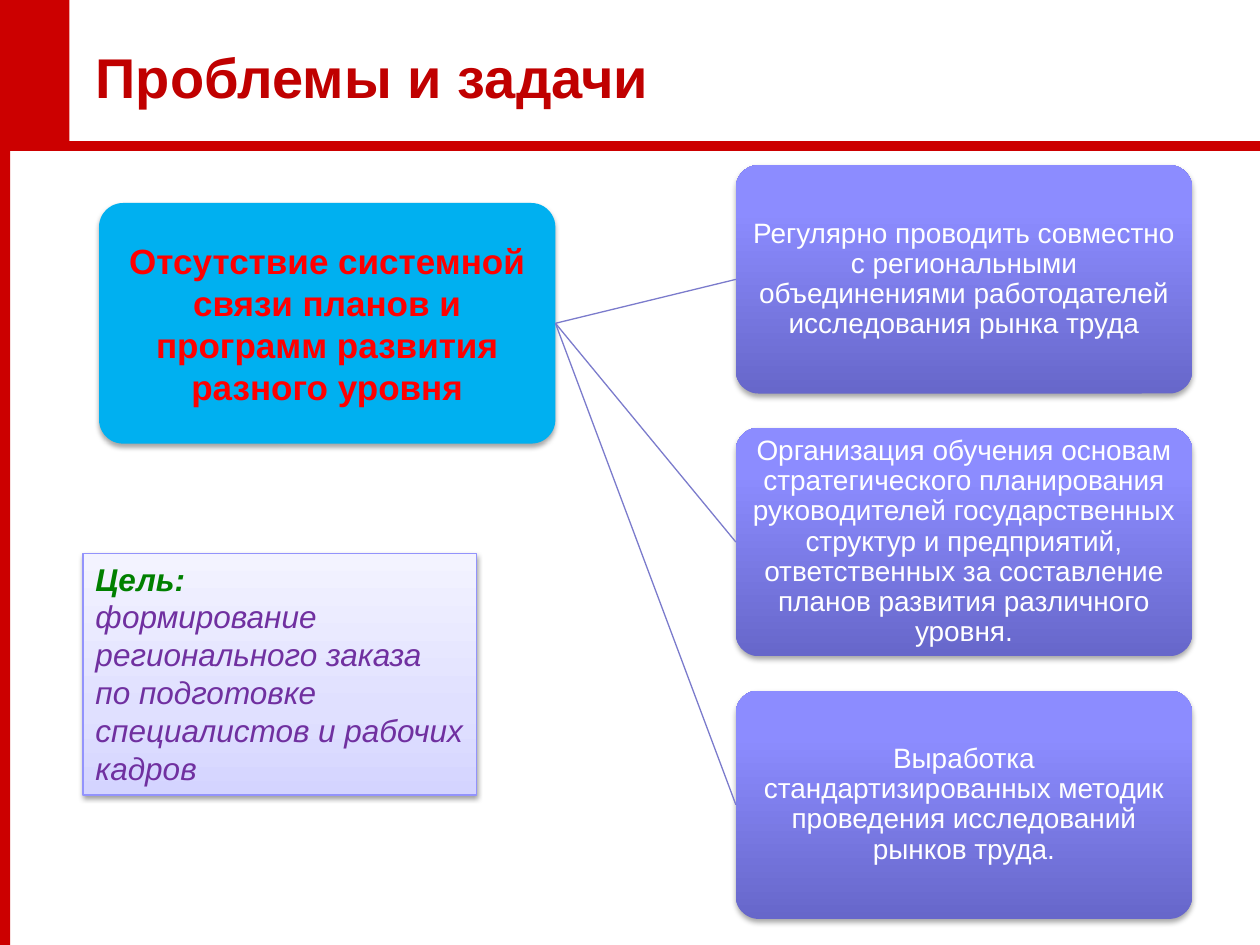
from lxml import etree
from pptx import Presentation
from pptx.dml.color import RGBColor
from pptx.enum import shapes, text
from pptx.oxml import ns
from pptx.util import Pt

C = {"frame": "CC0000", "title": "C00000", "problem": "00B0F0", "alert": "FF0000",
     "link": "7B7BCC", "white": "FFFFFF", "goal_line": "9393FC",
     "goal_head": "008000", "goal_text": "7030A0", "shadow": "000000"}
TASK_STOPS = [(0, "6767CA"), (80, "8C8CFF"), (100, "8E8EFF")]
GOAL_STOPS = [(0, "D4D4FF"), (35, "E0E0FF"), (100, "F3F3FF")]

TITLE = "Проблемы и задачи"
PROBLEM = "Отсутствие системной связи планов и программ развития разного уровня"
TASKS = [
    "Регулярно проводить совместно с региональными объединениями работодателей "
    "исследования рынка труда",
    "Организация обучения основам стратегического планирования руководителей "
    "государственных структур и предприятий, ответственных за составление "
    "планов развития различного уровня.",
    "Выработка стандартизированных методик проведения исследований рынков труда.",
]
GOAL = [("Цель:", "goal_head", True),
        ("формирование регионального заказа по подготовке специалистов "
         "и рабочих кадров", "goal_text", False)]

W, H = 720, 540
PROBLEM_BOX = (56.6, 116, 260.8, 137.5)
TASK_BOX = (420.5, 94.4, 260.8, 130.5)
TASK_STEP = 150.1
GOAL_BOX = (47.5, 316.3, 224.9, 138)


def rgb(name):
    return RGBColor.from_string(C[name])


def child(parent, tag, **attrs):
    return etree.SubElement(parent, ns.qn(tag), attrs)


def add_box(kind, box, fill):
    sp = s.shapes.add_shape(kind, *map(Pt, box))
    sp.shadow.inherit = False
    sp.fill.solid()
    sp.fill.fore_color.rgb = rgb(fill)
    sp.line.fill.background()
    return sp


def add_line(x1, y1, x2, y2, color, width):
    line = s.shapes.add_connector(shapes.MSO_CONNECTOR.STRAIGHT,
                                  *map(Pt, (x1, y1, x2, y2)))
    line.line.color.rgb = rgb(color)
    line.line.width = Pt(width)
    child(line._element.spPr, "a:effectLst")
    return line


def add_gradient(sp, stops):
    """Replace the solid fill by stops running from bottom to top."""
    solid = sp._element.spPr.find(ns.qn("a:solidFill"))
    grad = etree.Element(ns.qn("a:gradFill"), rotWithShape="1")
    gs_list = child(grad, "a:gsLst")
    for pos, color in stops:
        child(child(gs_list, "a:gs", pos=str(pos * 1000)), "a:srgbClr", val=color)
    child(grad, "a:lin", ang="16200000", scaled="0")
    solid.getparent().replace(solid, grad)


def add_shadow(sp, distance, alpha):
    effects = sp._element.spPr.find(ns.qn("a:effectLst"))
    outer = child(effects, "a:outerShdw", blurRad=str(Pt(3.1)), dist=str(Pt(distance)),
                  dir="5400000", rotWithShape="0")
    child(child(outer, "a:srgbClr", val=C["shadow"]), "a:alpha", val=str(alpha * 1000))


def style(p, size, color, bold=False, italic=False, align=text.PP_ALIGN.LEFT):
    p.alignment = align
    f = p.font
    f.name, f.size, f.bold, f.italic = "Arial", Pt(size), bold, italic
    f.color.rgb = rgb(color)


def add_card(box, words, fill, size, color, bold=False):
    sp = add_box(shapes.MSO_SHAPE.ROUNDED_RECTANGLE, box, fill)
    sp.adjustments[0] = 0.1
    add_shadow(sp, 1.8, 35)
    tf = sp.text_frame
    tf.word_wrap = True
    tf.vertical_anchor = text.MSO_ANCHOR.MIDDLE
    tf.margin_left = tf.margin_right = tf.margin_top = tf.margin_bottom = Pt(4.5)
    tf.text = words
    style(tf.paragraphs[0], size, color, bold, align=text.PP_ALIGN.CENTER)
    return sp


prs = Presentation()
prs.slide_width, prs.slide_height = Pt(W), Pt(H)
s = prs.slides.add_slide(prs.slide_layouts[5])

# Red frame
add_box(shapes.MSO_SHAPE.RECTANGLE, (0, 0, 5.8, H), "frame")
add_line(0, 83.5, W, 83.5, "frame", 6)
add_box(shapes.MSO_SHAPE.RECTANGLE, (0, 0, 39.6, 82), "frame")

title = s.shapes.title
title.left, title.top, title.width, title.height = map(Pt, (47.5, 9.4, 595.4, 67.7))
title.text_frame.text = TITLE
title.text_frame.vertical_anchor = text.MSO_ANCHOR.MIDDLE
style(title.text_frame.paragraphs[0], 32, "title", bold=True)

# Problem linked to its tasks
problem = add_card(PROBLEM_BOX, PROBLEM, "problem", 20, "alert", bold=True)
left, top, width, height = TASK_BOX
for i, words in enumerate(TASKS):
    task = add_card((left, top + i * TASK_STEP, width, height), words, "link", 16, "white")
    add_gradient(task, TASK_STOPS)
    task.text_frame.paragraphs[0].line_spacing = 0.9
    link = add_line(0, 0, 0, 0, "link", 0.75)
    link.begin_connect(problem, 3)
    link.end_connect(task, 1)

# Goal
goal = add_box(shapes.MSO_SHAPE.RECTANGLE, GOAL_BOX, "white")
add_gradient(goal, GOAL_STOPS)
goal.line.color.rgb = rgb("goal_line")
goal.line.width = Pt(0.75)
add_shadow(goal, 1.6, 38)
tf = goal.text_frame
tf.word_wrap = True
tf.auto_size = text.MSO_AUTO_SIZE.SHAPE_TO_FIT_TEXT
tf.vertical_anchor = text.MSO_ANCHOR.TOP
tf.text = "\n".join(words for words, _, _ in GOAL)
for p, (_, color, bold) in zip(tf.paragraphs, GOAL):
    style(p, 18, color, bold, italic=True)

prs.save("out.pptx")
